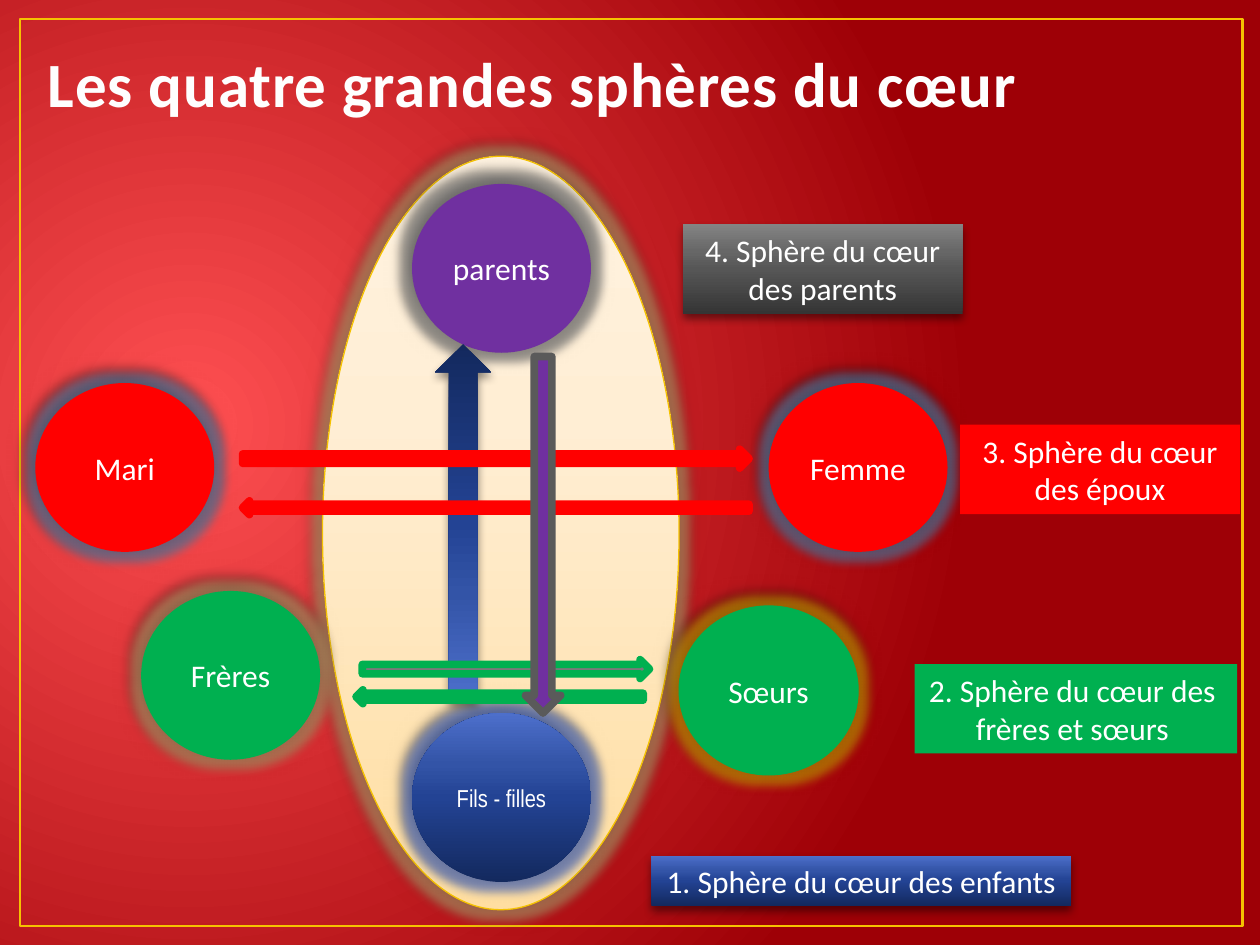
from lxml import etree
from pptx import Presentation
from pptx.dml.color import RGBColor
from pptx.enum import shapes, text
from pptx.oxml import ns
from pptx.util import Inches, Pt

WHITE = RGBColor(0xFF, 0xFF, 0xFF)
TITLE = RGBColor(0xFE, 0xFE, 0xFE)
GOLD = RGBColor(0xF5, 0xC2, 0x01)
RED = RGBColor(0xFF, 0x00, 0x00)
GREEN = RGBColor(0x00, 0xB0, 0x50)
PURPLE = RGBColor(0x70, 0x30, 0xA0)
GREY = RGBColor(0x7A, 0x7A, 0x7A)
DARK = RGBColor(0x5A, 0x5A, 0x5A)
BLACK = RGBColor(0x00, 0x00, 0x00)
TAN = RGBColor(0xB8, 0x9C, 0x6A)
STEEL = RGBColor(0x52, 0x80, 0xA8)
BLUE = RGBColor(0x4D, 0x6F, 0xCB)
AMBER = RGBColor(0xD0, 0xA0, 0x00)

# Gradients as (position in percent, colour), running from bottom to top
NAVY = [(0, RGBColor(0x13, 0x29, 0x5E)), (50, RGBColor(0x23, 0x43, 0x94)),
        (70, RGBColor(0x33, 0x54, 0xA7)), (100, BLUE)]
SLATE = [(0, RGBColor(0x35, 0x35, 0x35)), (50, RGBColor(0x56, 0x56, 0x56)),
         (70, RGBColor(0x67, 0x67, 0x67)), (100, RGBColor(0x84, 0x84, 0x84))]
CREAM = [(0, RGBColor(0xFF, 0xDE, 0xA1)), (65, RGBColor(0xFF, 0xEE, 0xD4)),
         (100, RGBColor(0xFF, 0xF3, 0xE1))]
BACK = [(0, RGBColor(0xFF, 0x50, 0x52)), (100, RGBColor(0x9E, 0x00, 0x06))]

# Shadows: opacity, blur, distance, direction
OVAL = (50, 5, 2, 245)
BALL = (60, 4, 3, 245)
DROP = (45, 5, 3, 90)
MSO = shapes.MSO_SHAPE

deck = Presentation()
deck.slide_width, deck.slide_height = Inches(10), Inches(7.5)
slide = deck.slides.add_slide(deck.slide_layouts[5])


def blend(fill, stops, shade):
    """Give a fill the colour stops and a linear or circular course."""
    fill.gradient()
    grad = fill._xPr.find(ns.qn("a:gradFill"))
    for child in list(grad):
        grad.remove(child)
    items = "".join(f'<a:gs pos="{pos * 1000}"><a:srgbClr val="{tone}"/></a:gs>'
                    for pos, tone in stops)
    block = etree.fromstring(f'<a:g {ns.nsdecls("a")}><a:gsLst>{items}</a:gsLst>{shade}</a:g>')
    grad.extend(list(block))


def draw(kind, box, fill=None, line=None, width=0.75, turn=0, glow=None,
         shadow=None, lines=(), size=18, font="Calibri", wrap=True):
    """Add a shape with its fill, outline, effects and centred text."""
    shape = slide.shapes.add_shape(kind, *[Inches(n) for n in box])
    shape.rotation = turn
    shape.shadow.inherit = False
    if fill is None:
        shape.fill.background()
    elif isinstance(fill, list):
        blend(shape.fill, fill, '<a:lin ang="16200000" scaled="0"/>')
    else:
        shape.fill.solid()
        shape.fill.fore_color.rgb = fill
    if line is None:
        shape.line.fill.background()
    else:
        shape.line.color.rgb = line
        shape.line.width = Pt(width)
        etree.SubElement(shape.line._get_or_add_ln(), ns.qn("a:round"))

    fx = shape._element.spPr.find(ns.qn("a:effectLst"))
    if glow:
        node = etree.SubElement(fx, ns.qn("a:glow"), rad=str(Pt(11)))
        tone = etree.SubElement(node, ns.qn("a:srgbClr"), val=str(glow))
        etree.SubElement(tone, ns.qn("a:alpha"), val="60000")
    if shadow:
        alpha, blur, dist, way = shadow
        node = etree.SubElement(fx, ns.qn("a:outerShdw"), blurRad=str(Pt(blur)),
                                dist=str(Pt(dist)), dir=str(way * 60000), rotWithShape="0")
        tone = etree.SubElement(node, ns.qn("a:srgbClr"), val=str(BLACK))
        etree.SubElement(tone, ns.qn("a:alpha"), val=str(alpha * 1000))

    frame = shape.text_frame
    frame.word_wrap = wrap
    frame.vertical_anchor = text.MSO_ANCHOR.MIDDLE
    for i, words in enumerate(lines):
        para = frame.add_paragraph() if i else frame.paragraphs[0]
        para.alignment = text.PP_ALIGN.CENTER
        run = para.add_run()
        run.text = words
        run.font.size, run.font.name = Pt(size), font
        run.font.color.rgb = WHITE


# Background and frame
blend(slide.background.fill, BACK, '<a:path path="circle"><a:fillToRect l="15000" '
      't="50000" r="85000" b="60000"/></a:path>')
draw(MSO.RECTANGLE, (0.16, 0.15, 9.7, 7.2), line=GOLD, width=1.5)

# Title
title = slide.shapes.title
title.left, title.top = Inches(0.28), Inches(0.29)
title.width, title.height = Inches(9.55), Inches(0.71)
title.text_frame.vertical_anchor = text.MSO_ANCHOR.BOTTOM
para = title.text_frame.paragraphs[0]
para.alignment = text.PP_ALIGN.LEFT
run = para.add_run()
run.text = "Les quatre grandes sphères du cœur"
run.font.size, run.font.name, run.font.bold = Pt(36), "Calibri", True
run.font.color.rgb = TITLE
run._r.get_or_add_rPr().set("spc", "50")

# Large oval
draw(MSO.OVAL, (2.56, 1.24, 2.83, 5.98), CREAM, GOLD, glow=TAN, shadow=OVAL)

# Family members in the oval, with the rising arrow
ball = (1.42, 1.34)
draw(MSO.OVAL, (3.27, 1.46, *ball), PURPLE, glow=GREY, shadow=BALL, lines=["parents"])
draw(MSO.OVAL, (3.27, 5.66, *ball), NAVY, glow=BLUE, shadow=BALL,
     lines=["Fils - filles"], size=14, font="Arial Narrow")
draw(MSO.DOWN_ARROW, (3.45, 2.73, 0.45, 2.83), NAVY, turn=180, shadow=DROP)

# Family members on both sides
for name, x, y, fill, line, glow in [
    ("Sœurs", 5.39, 4.81, GREEN, GREEN, AMBER),
    ("Frères", 1.12, 4.69, GREEN, None, TAN),
    ("Femme", 6.1, 3.04, RED, None, STEEL),
    ("Mari", 0.28, 3.04, RED, None, STEEL),
]:
    draw(MSO.OVAL, (x, y, *ball), fill, line, glow=glow, shadow=BALL, lines=[name])

# Exchange arrows
for box, turn, fill, line in [
    ((3.86, 1.63, 0.15, 4.02), 270, RED, RED),
    ((3.91, 4.39, 0.11, 2.28), 90, GREY, GREEN),
    ((3.94, 4.17, 0.15, 2.28), 270, GREY, GREEN),
    ((3.88, 2.02, 0.11, 4.02), 90, RED, RED),
    ((4.17, 2.83, 0.28, 2.83), 0, PURPLE, DARK),
]:
    draw(MSO.DOWN_ARROW, box, fill, line, 4.33, turn)

# Labels of the four spheres
for box, fill, shadow, wrap, lines in [
    ((5.17, 6.79, 3.33, 0.4), NAVY, DROP, False, ["1. Sphère du cœur des enfants"]),
    ((7.26, 5.27, 2.56, 0.71), GREEN, None, False,
     ["2. Sphère du cœur des ", "frères et sœurs "]),
    ((7.62, 3.37, 2.22, 0.71), RED, None, True, ["3. Sphère du cœur des époux"]),
    ((5.42, 1.78, 2.22, 0.71), SLATE, DROP, True, ["4. Sphère du cœur des parents"]),
]:
    draw(MSO.RECTANGLE, box, fill, shadow=shadow, lines=lines, wrap=wrap)

deck.save("out.pptx")
